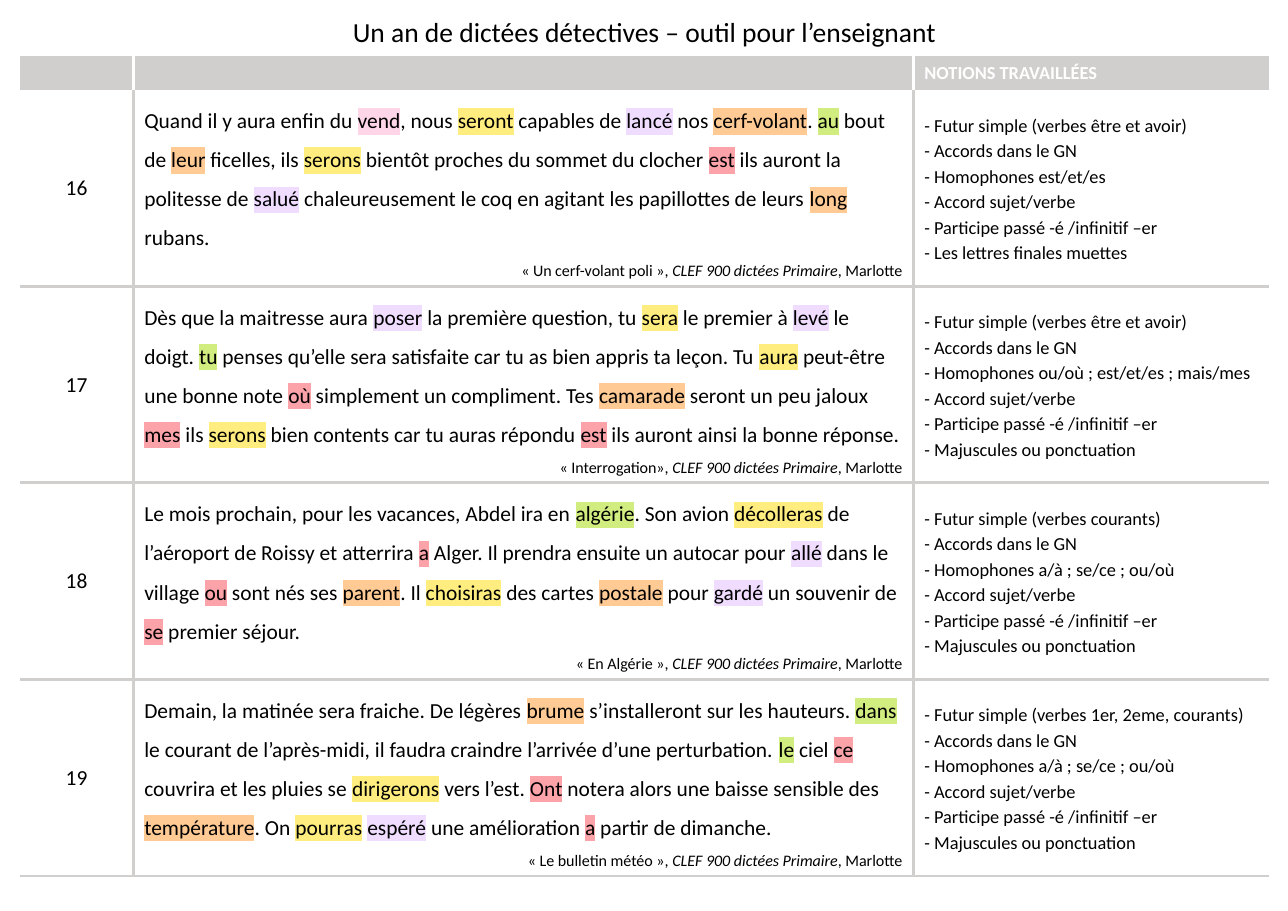
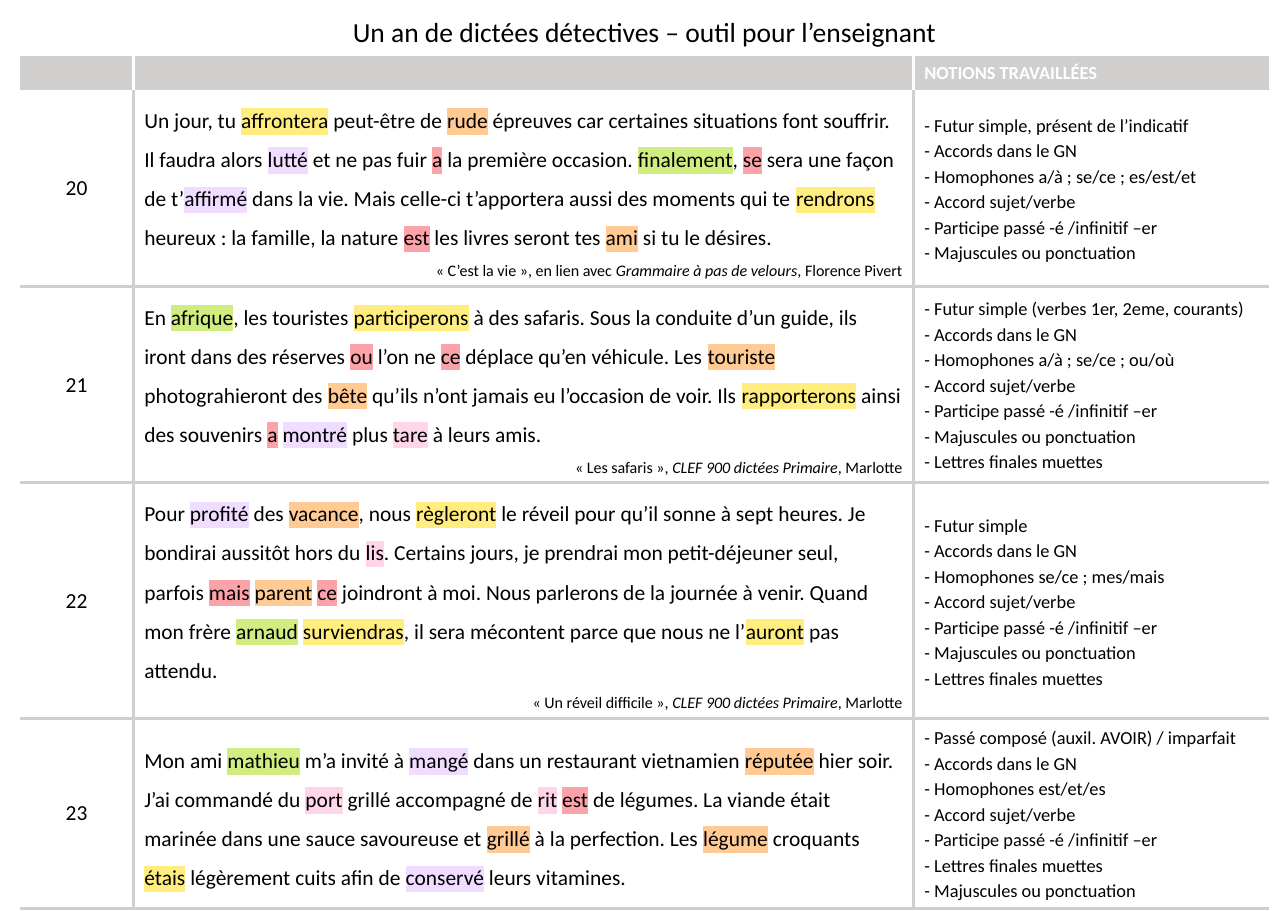
"""Build the teacher's tables for a year of detective dictations."""
from collections.abc import Iterator
from dataclasses import dataclass

from lxml.etree import SubElement
from pptx import Presentation
from pptx.dml.color import RGBColor
from pptx.enum.text import MSO_ANCHOR, PP_ALIGN
from pptx.oxml.ns import qn
from pptx.presentation import Presentation as Deck
from pptx.table import Table, _Cell
from pptx.text.text import _Paragraph
from pptx.util import Inches, Pt

FONT = "Calibri"
BLACK = RGBColor(0x00, 0x00, 0x00)
WHITE = RGBColor(0xFF, 0xFF, 0xFF)
GREY = RGBColor(0xD1, 0xCE, 0xCE)
YELLOW = RGBColor(0xFF, 0xEE, 0x7F)
LILAC = RGBColor(0xF0, 0xDC, 0xFF)
ORANGE = RGBColor(0xFF, 0xCA, 0x94)
RED = RGBColor(0xFC, 0xA2, 0xA9)
GREEN = RGBColor(0xD1, 0xEC, 0x7F)
PINK = RGBColor(0xFE, 0xD6, 0xE7)
MARKS = {"verb": YELLOW, "part": LILAC, "noun": ORANGE,
         "homo": RED, "caps": GREEN, "mute": PINK}

TITLE = "Un an de dictées détectives – outil pour l’enseignant"
HEADING = "NOTIONS TRAVAILLÉES"
BOOK = "CLEF 900 dictées Primaire"
PUBLISHER = "Marlotte"
NO_STYLE = "{2D5ABB26-0587-4C30-8999-92F81FD0307C}"
COL_WIDTHS = (1.03, 7.08, 3.23)
TITLE_HEIGHT, HEADER_HEIGHT = 0.4, 0.31
FIRST_BODY_ROW = 2

CAPITALS = "Majuscules ou ponctuation"
MUTE_ENDINGS = "Lettres finales muettes"
FUTURE_AUX = "Futur simple (verbes être et avoir)"
FUTURE_GROUPS = "Futur simple (verbes 1er, 2eme, courants)"


@dataclass(frozen=True)
class Dictation:
    """One dictation, its marked mistakes, its source and its notions."""
    number: int
    text: str
    tense: str
    homophones: str
    extras: tuple[str, ...] = (CAPITALS,)
    quote: str = ""
    book: str = BOOK
    credit: str = PUBLISHER
    height: float = 1.78

    def notions(self) -> tuple[str, ...]:
        """Return the notions in reading order."""
        return (self.tense, "Accords dans le GN", f"Homophones {self.homophones}",
                "Accord sujet/verbe", "Participe passé -é /infinitif –er", *self.extras)


PAGES = (
    (
        Dictation(
            16,
            "Quand il y aura enfin du [mute:vend], nous [verb:seront] capables de "
            "[part:lancé] nos [noun:cerf-volant]. [caps:au] bout de [noun:leur] ficelles, "
            "ils [verb:serons] bientôt proches du sommet du clocher [homo:est] ils auront "
            "la politesse de [part:salué] chaleureusement le coq en agitant les "
            "papillottes de leurs [noun:long] rubans.",
            FUTURE_AUX, "est/et/es", ("Les lettres finales muettes",),
            quote="« Un cerf-volant poli », "),
        Dictation(
            17,
            "Dès que la maitresse aura [part:poser] la première question, tu [verb:sera] "
            "le premier à [part:levé] le doigt. [caps:tu] penses qu’elle sera satisfaite "
            "car tu as bien appris ta leçon. Tu [verb:aura] peut-être une bonne note "
            "[homo:où] simplement un compliment. Tes [noun:camarade] seront un peu jaloux "
            "[homo:mes] ils [verb:serons] bien contents car tu auras répondu [homo:est] "
            "ils auront ainsi la bonne réponse.",
            FUTURE_AUX, "ou/où ; est/et/es ; mais/mes",
            quote="« Interrogation», "),
        Dictation(
            18,
            "Le mois prochain, pour les vacances, Abdel ira en [caps:algérie]. Son avion "
            "[verb:décolleras] de l’aéroport de Roissy et atterrira [homo:a] Alger. Il "
            "prendra ensuite un autocar pour [part:allé] dans le village [homo:ou] sont "
            "nés ses [noun:parent]. Il [verb:choisiras] des cartes [noun:postale] pour "
            "[part:gardé] un souvenir de [homo:se] premier séjour.",
            "Futur simple (verbes courants)", "a/à ; se/ce ; ou/où",
            quote="« En Algérie », "),
        Dictation(
            19,
            "Demain, la matinée sera fraiche. De légères [noun:brume] s’installeront sur "
            "les hauteurs. [caps:dans] le courant de l’après-midi, il faudra craindre "
            "l’arrivée d’une perturbation. [caps:le] ciel [homo:ce] couvrira et les pluies "
            "se [verb:dirigerons] vers l’est. [homo:Ont] notera alors une baisse sensible "
            "des [noun:température]. On [verb:pourras] [part:espéré] une amélioration "
            "[homo:a] partir de dimanche.",
            FUTURE_GROUPS, "a/à ; se/ce ; ou/où",
            quote="« Le bulletin météo », "),
    ),
    (
        Dictation(
            20,
            "Un jour, tu [verb:affrontera] peut-être de [noun:rude] épreuves car certaines "
            "situations font souffrir. Il faudra alors [part:lutté] et ne pas fuir [homo:a] "
            "la première occasion. [caps:finalement], [homo:se] sera une façon de "
            "t’[part:affirmé] dans la vie. Mais celle-ci t’apportera aussi des moments qui "
            "te [verb:rendrons] heureux : la famille, la nature [homo:est] les livres "
            "seront tes [noun:ami] si tu le désires.",
            "Futur simple, présent de l’indicatif", "a/à ; se/ce ; es/est/et",
            quote="« C’est la vie », en lien avec ",
            book="Grammaire à pas de velours", credit="Florence Pivert"),
        Dictation(
            21,
            "En [caps:afrique], les touristes [verb:participerons] à des safaris. Sous la "
            "conduite d’un guide, ils iront dans des réserves [homo:ou] l’on ne [homo:ce] "
            "déplace qu’en véhicule. Les [noun:touriste] photograhieront des [noun:bête] "
            "qu’ils n’ont jamais eu l’occasion de voir. Ils [verb:rapporterons] ainsi des "
            "souvenirs [homo:a] [part:montré] plus [mute:tare] à leurs amis.",
            FUTURE_GROUPS, "a/à ; se/ce ; ou/où", (CAPITALS, MUTE_ENDINGS),
            quote="« Les safaris », "),
        Dictation(
            22,
            "Pour [part:profité] des [noun:vacance], nous [verb:règleront] le réveil pour "
            "qu’il sonne à sept heures. Je bondirai aussitôt hors du [mute:lis]. Certains "
            "jours, je prendrai mon petit-déjeuner seul, parfois [homo:mais] [noun:parent] "
            "[homo:ce] joindront à moi. Nous parlerons de la journée à venir. Quand mon "
            "frère [caps:arnaud] [verb:surviendras], il sera mécontent parce que nous ne "
            "l’[verb:auront] pas attendu.",
            "Futur simple", "se/ce ; mes/mais", (CAPITALS, MUTE_ENDINGS),
            quote="« Un réveil difficile », ", height=2.14),
        Dictation(
            23,
            "Mon ami [caps:mathieu] m’a invité à [part:mangé] dans un restaurant vietnamien "
            "[noun:réputée] hier soir. J’ai commandé du [mute:port] grillé accompagné de "
            "[mute:rit] [homo:est] de légumes. La viande était marinée dans une sauce "
            "savoureuse et [noun:grillé] à la perfection. Les [noun:légume] croquants "
            "[verb:étais] légèrement cuits afin de [part:conservé] leurs vitamines.",
            "Passé composé (auxil. AVOIR) / imparfait", "est/et/es",
            (MUTE_ENDINGS, CAPITALS), height=1.72),
    ),
)


def add_run(p: _Paragraph, text: str, *, size: float = 14, color: RGBColor = BLACK,
            bold: bool = False, italic: bool = False,
            highlight: RGBColor | None = None) -> None:
    """Append a formatted run to a paragraph."""
    r = p.add_run()
    r.text = text
    font = r.font
    font.name, font.size, font.bold, font.italic = FONT, Pt(size), bold, italic
    font.color.rgb = color
    if highlight is not None:
        props = r._r.get_or_add_rPr()
        mark = SubElement(props, qn("a:highlight"))
        SubElement(mark, qn("a:srgbClr"), val=str(highlight))
        props.find(qn("a:solidFill")).addnext(mark)


def split_marks(text: str) -> Iterator[tuple[str, RGBColor | None]]:
    """Yield the pieces of a marked text with their highlight colours."""
    for chunk in text.split("]"):
        plain, _, marked = chunk.partition("[")
        if plain:
            yield plain, None
        if marked:
            kind, _, word = marked.partition(":")
            yield word, MARKS[kind]


def set_borders(cell: _Cell, edges: str, color: RGBColor) -> None:
    """Draw the edges named among L, R, T and B, in that order."""
    props = cell._tc.get_or_add_tcPr()
    for edge in edges:
        ln = SubElement(props, qn(f"a:ln{edge}"), w=str(Pt(2.25)))
        SubElement(SubElement(ln, qn("a:solidFill")), qn("a:srgbClr"), val=str(color))


def side_edges(col: int) -> str:
    """Return the inner vertical edges of a column."""
    return ("L" if col > 0 else "") + ("R" if col < len(COL_WIDTHS) - 1 else "")


def fill_header(table: Table) -> None:
    """Write the title row and the grey heading band."""
    title = table.cell(0, 0)
    title.merge(table.cell(0, len(COL_WIDTHS) - 1))
    title.vertical_anchor = MSO_ANCHOR.MIDDLE
    p = title.text_frame.paragraphs[0]
    p.alignment = PP_ALIGN.CENTER
    add_run(p, TITLE, size=18)
    for col, heading in enumerate(("", "", HEADING)):
        cell = table.cell(1, col)
        cell.vertical_anchor = MSO_ANCHOR.MIDDLE
        set_borders(cell, side_edges(col), WHITE)
        cell.fill.solid()
        cell.fill.fore_color.rgb = GREY
        p = cell.text_frame.paragraphs[0]
        if heading:
            add_run(p, heading, size=12, color=WHITE, bold=True)
        else:
            SubElement(p._p, qn("a:endParaRPr"), sz="1200")


def fill_dictation(table: Table, row: int, item: Dictation) -> None:
    """Write one dictation across a body row."""
    cells = [table.cell(row, col) for col in range(len(COL_WIDTHS))]
    for col, cell in enumerate(cells):
        cell.vertical_anchor = MSO_ANCHOR.MIDDLE
        top = "T" if row > FIRST_BODY_ROW else ""
        set_borders(cell, side_edges(col) + top + "B", GREY)
        cell.fill.background()
    number, body, notions = (cell.text_frame for cell in cells)

    p = number.paragraphs[0]
    p.alignment = PP_ALIGN.CENTER
    add_run(p, str(item.number))

    p = body.paragraphs[0]
    p.line_spacing = 1.5
    for piece, color in split_marks(item.text):
        add_run(p, piece, highlight=color)
    if item.quote:
        p = body.add_paragraph()
        p.alignment = PP_ALIGN.RIGHT
        p.line_spacing = 1.5
        add_run(p, item.quote, size=10.5)
        add_run(p, item.book, size=10.5, italic=True)
        add_run(p, f", {item.credit}", size=10.5)

    for i, notion in enumerate(item.notions()):
        p = notions.add_paragraph() if i else notions.paragraphs[0]
        p.line_spacing = 1.14
        add_run(p, f"- {notion}", size=12)


def add_page(prs: Deck, items: tuple[Dictation, ...]) -> None:
    """Add a slide holding one table of dictations."""
    s = prs.slides.add_slide(prs.slide_layouts[6])
    heights = (TITLE_HEIGHT, HEADER_HEIGHT, *(item.height for item in items))
    table = s.shapes.add_table(
        len(heights), len(COL_WIDTHS), Inches(0.18), Inches(0.1),
        Inches(sum(COL_WIDTHS)), Inches(sum(heights))).table
    table.first_row = table.horz_banding = False
    table._tbl.tblPr.find(qn("a:tableStyleId")).text = NO_STYLE
    for column, width in zip(table.columns, COL_WIDTHS):
        column.width = Inches(width)
    for row, height in zip(table.rows, heights):
        row.height = Inches(height)
    fill_header(table)
    for row, item in enumerate(items, FIRST_BODY_ROW):
        fill_dictation(table, row, item)


def main() -> None:
    """Build and save the presentation."""
    prs = Presentation()
    prs.slide_width, prs.slide_height = Inches(11.69), Inches(8.27)
    for items in PAGES:
        add_page(prs, items)
    prs.save("out.pptx")


if __name__ == "__main__":
    main()
